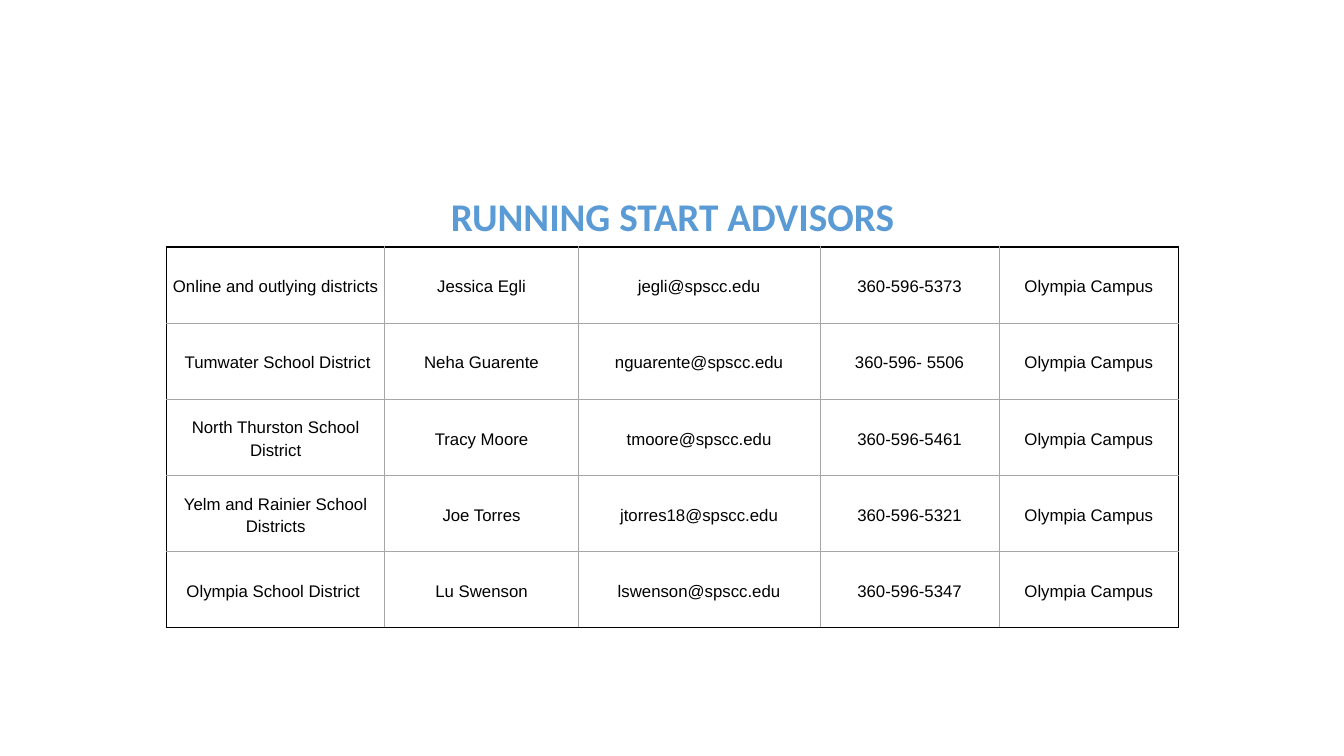
from lxml.etree import SubElement
from pptx import Presentation
from pptx.dml.color import RGBColor
from pptx.enum.text import MSO_ANCHOR, PP_ALIGN
from pptx.oxml.ns import qn
from pptx.util import Inches, Pt

BLACK = RGBColor(0x00, 0x00, 0x00)
GREY = RGBColor(0xA6, 0xA6, 0xA6)
WHITE = RGBColor(0xFF, 0xFF, 0xFF)
BLUE = RGBColor(0x5B, 0x9B, 0xD5)

OUTER = (BLACK, 1)
INNER = (GREY, 0.75)
WIDTHS = (2.17, 1.92, 2.4, 1.78, 1.78)
HEAD = 0.67
CAMPUS = "Olympia Campus"
STAFF = (
    ("Online and outlying districts", "Jessica Egli", "jegli@spscc.edu", "360-596-5373"),
    (" Tumwater School District", "Neha Guarente", "nguarente@spscc.edu", "360-596- 5506"),
    ("North Thurston School District", "Tracy Moore", "tmoore@spscc.edu", "360-596-5461"),
    ("Yelm and Rainier School Districts", "Joe Torres", "jtorres18@spscc.edu", "360-596-5321"),
    ("Olympia School District ", "Lu Swenson", "lswenson@spscc.edu", "360-596-5347"),
)


def set_edges(cell, left, right, top, bottom):
    """Draw each cell edge from a (colour, points) pair, or clear it for None."""
    props = cell._tc.get_or_add_tcPr()
    for tag, edge in zip(("a:lnL", "a:lnR", "a:lnT", "a:lnB"), (left, right, top, bottom)):
        line = SubElement(props, qn(tag))
        if edge is None:
            SubElement(line, qn("a:noFill"))
            continue
        color, size = edge
        line.set("w", str(Pt(size)))
        fill = SubElement(line, qn("a:solidFill"))
        SubElement(fill, qn("a:srgbClr")).set("val", str(color))


def write_cell(cell, text, font, size, color, bold=False):
    """Put one centred run in a cell."""
    cell.vertical_anchor = MSO_ANCHOR.MIDDLE
    cell.margin_left = cell.margin_right = Inches(0.04)
    cell.margin_top = cell.margin_bottom = Inches(0.04)
    para = cell.text_frame.paragraphs[0]
    para.alignment = PP_ALIGN.CENTER
    para.line_spacing = 1.19
    para.space_after = Pt(6)
    run = para.add_run()
    run.text = text
    run.font.name = font
    run.font.size = Pt(size)
    run.font.bold = bold
    run.font.color.rgb = color


def add_header(table):
    """Fill the merged top row with the heading."""
    count = len(table.columns)
    table.cell(0, 0).merge(table.cell(0, count - 1))
    for col in range(count):
        cell = table.cell(0, col)
        set_edges(cell, None, None, None, OUTER)
        cell.fill.background()
    write_cell(table.cell(0, 0), "RUNNING START ADVISORS", "Calibri", 28, BLUE, True)


def add_staff(table):
    """Fill the advisor rows, with a black frame around a grey grid."""
    last = len(WIDTHS) - 1
    for row, person in enumerate(STAFF, 1):
        for col, text in enumerate((*person, CAMPUS)):
            cell = table.cell(row, col)
            set_edges(
                cell,
                OUTER if col == 0 else INNER,
                OUTER if col == last else INNER,
                OUTER if row == 1 else INNER,
                OUTER if row == len(STAFF) else INNER,
            )
            cell.fill.solid()
            cell.fill.fore_color.rgb = WHITE
            write_cell(cell, text, "Arial", 12, BLACK)


def add_roster(slide, left, top, width, height):
    """Place the advisor table in the given box."""
    frame = slide.shapes.add_table(
        len(STAFF) + 1, len(WIDTHS), Inches(left), Inches(top), Inches(width), Inches(height)
    )
    table = frame.table
    table.first_row = table.horz_banding = False
    for column, share in zip(table.columns, WIDTHS):
        column.width = Inches(width * share / sum(WIDTHS))
    for index, row in enumerate(table.rows):
        row.height = Inches((height - HEAD) / len(STAFF) if index else HEAD)
    add_header(table)
    add_staff(table)


def main():
    """Build and save the slide."""
    deck = Presentation()
    deck.slide_width = Inches(13.33)
    deck.slide_height = Inches(7.5)
    slide = deck.slides.add_slide(deck.slide_layouts[6])
    add_roster(slide, 1.65, 1.78, 10.04, 4.45)
    deck.save("out.pptx")


if __name__ == "__main__":
    main()
